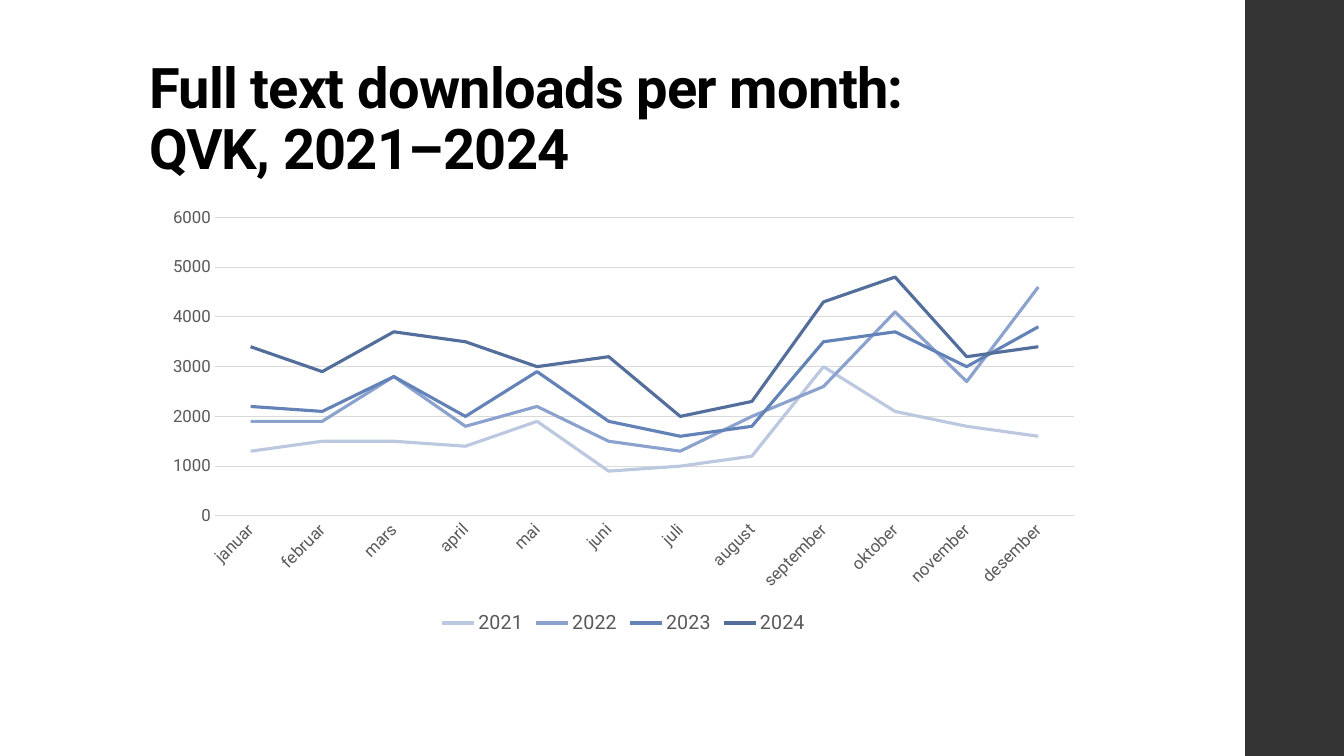
"""Build a slide with a line chart of monthly full text downloads, 2021–2024."""
from pptx import Presentation
from pptx.chart.data import CategoryChartData
from pptx.dml.color import RGBColor
from pptx.enum.chart import XL_CHART_TYPE, XL_LEGEND_POSITION, XL_MARKER_STYLE, XL_TICK_MARK
from pptx.enum.shapes import MSO_SHAPE
from pptx.enum.text import MSO_ANCHOR
from pptx.util import Inches, Pt

LINE_CHART = XL_CHART_TYPE.LINE
LEGEND_BOTTOM = XL_LEGEND_POSITION.BOTTOM
NO_MARKER = XL_MARKER_STYLE.NONE
NO_TICK = XL_TICK_MARK.NONE
RECTANGLE = MSO_SHAPE.RECTANGLE
BOTTOM = MSO_ANCHOR.BOTTOM

FONT = "Roboto"
COLORS = {
    "band": "333333",
    "title": "000000",
    "label": "595959",
    "grid": "D9D9D9",
    "2021": "BCC7E0",
    "2022": "8CA2CE",
    "2023": "6282B8",
    "2024": "536E9B",
}
MONTHS = ["januar", "februar", "mars", "april", "mai", "juni", "juli",
          "august", "september", "oktober", "november", "desember"]
DOWNLOADS = {
    "2021": [1300, 1500, 1500, 1400, 1900, 900, 1000, 1200, 3000, 2100, 1800, 1600],
    "2022": [1900, 1900, 2800, 1800, 2200, 1500, 1300, 2000, 2600, 4100, 2700, 4600],
    "2023": [2200, 2100, 2800, 2000, 2900, 1900, 1600, 1800, 3500, 3700, 3000, 3800],
    "2024": [3400, 2900, 3700, 3500, 3000, 3200, 2000, 2300, 4300, 4800, 3200, 3400],
}


def color(name):
    return RGBColor.from_string(COLORS[name])


def add_text(slide, lines, left, top, width, height, size, ink, bold=False,
             anchor=BOTTOM, line_spacing=1.0, tracking=0):
    """Add a text box whose lines share one paragraph; tracking is in points."""
    frame = slide.shapes.add_textbox(
        Inches(left), Inches(top), Inches(width), Inches(height)).text_frame
    frame.word_wrap = True
    frame.vertical_anchor = anchor
    paragraph = frame.paragraphs[0]
    paragraph.line_spacing = line_spacing
    for index, line in enumerate(lines):
        if index:
            paragraph.add_line_break()
        run = paragraph.add_run()
        run.text = line
        run.font.name = FONT
        run.font.size = Pt(size)
        run.font.bold = bold
        run.font.color.rgb = color(ink)
        run.font._element.set("spc", str(int(tracking * 100)))


presentation = Presentation()
presentation.slide_width = Inches(13.33)
presentation.slide_height = Inches(7.5)
slide = presentation.slides.add_slide(presentation.slide_layouts[6])

side_band = slide.shapes.add_shape(
    RECTANGLE, Inches(12.35), 0, Inches(0.98), Inches(7.5))
side_band.shadow.inherit = False
side_band.fill.solid()
side_band.fill.fore_color.rgb = color("band")
side_band.line.fill.background()

add_text(slide, ["Full text downloads per month:", "QVK, 2021–2024"],
         1.38, 0.4, 10.6, 1.45, size=40, ink="title", bold=True,
         line_spacing=0.9, tracking=-0.5)

download_data = CategoryChartData(number_format="General")
download_data.categories = MONTHS
for year, counts in DOWNLOADS.items():
    download_data.add_series(year, counts)
downloads = slide.shapes.add_chart(
    LINE_CHART, Inches(1.53), Inches(1.97), Inches(9.31), Inches(4.37),
    download_data).chart
downloads.has_title = False
downloads.font.name = FONT
downloads.font.size = Pt(10)
downloads.plots[0].vary_by_categories = False

for yearly_line in downloads.plots[0].series:
    yearly_line.smooth = False
    yearly_line.marker.style = NO_MARKER
    yearly_line.format.line.width = Pt(2.25)
    yearly_line.format.line.color.rgb = color(yearly_line.name)

months_axis, counts_axis = downloads.category_axis, downloads.value_axis
counts_axis.minimum_scale = 0
counts_axis.maximum_scale = 6000
counts_axis.major_unit = 1000
counts_axis.has_major_gridlines = True
counts_axis.format.line.fill.background()
for rule in (months_axis.format.line, counts_axis.major_gridlines.format.line):
    rule.width = Pt(0.75)
    rule.color.rgb = color("grid")
for axis in (months_axis, counts_axis):
    axis.major_tick_mark = NO_TICK
    axis.minor_tick_mark = NO_TICK

downloads.has_legend = True
downloads.legend.position = LEGEND_BOTTOM
downloads.legend.include_in_layout = False
for labels, size in ((months_axis.tick_labels, 12),
                     (counts_axis.tick_labels, 12),
                     (downloads.legend, 14)):
    labels.font.name = FONT
    labels.font.size = Pt(size)
    labels.font.color.rgb = color("label")
months_axis._element.txPr.bodyPr.set("rot", "-2700000")

presentation.save("out.pptx")
